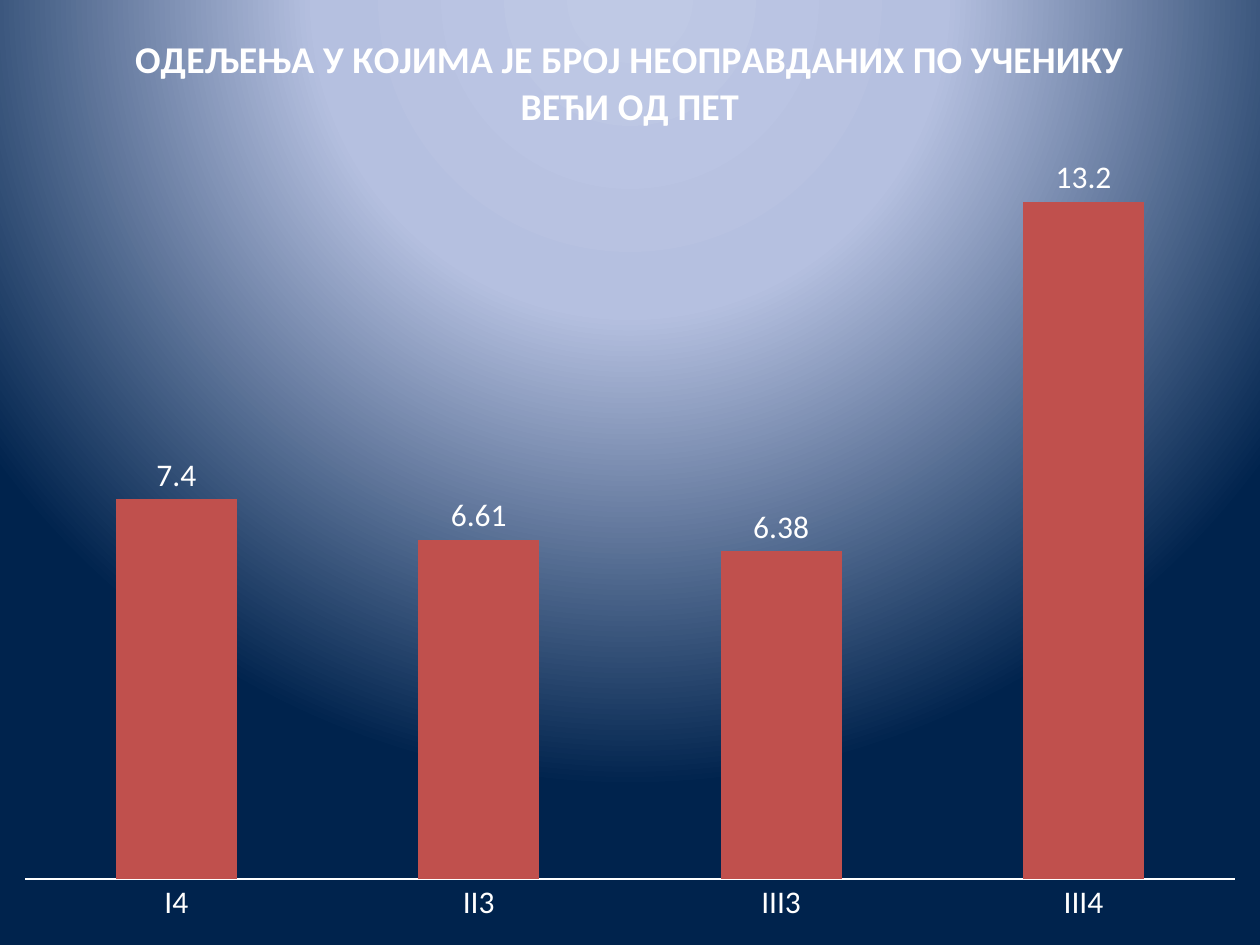
from pptx import Presentation
from pptx.chart.data import CategoryChartData
from pptx.dml.color import RGBColor
from pptx.enum.chart import XL_CHART_TYPE, XL_LABEL_POSITION, XL_TICK_MARK
from pptx.oxml import parse_xml
from pptx.oxml.ns import nsdecls, qn
from pptx.util import Pt

COLUMNS = XL_CHART_TYPE.COLUMN_CLUSTERED
OUTSIDE_END = XL_LABEL_POSITION.OUTSIDE_END
NO_TICKS = XL_TICK_MARK.NONE

SLIDE_W, SLIDE_H = 720, 540
FONT = "Calibri"
WHITE, RED = "FFFFFF", "C0504D"
GLOW = [(0, "BFC9E5"), (40, "B5C0E0"), (100, "00234D")]
TITLE = "ОДЕЉЕЊА У КОЈИМА ЈЕ БРОЈ НЕОПРАВДАНИХ ПО УЧЕНИКУ ВЕЋИ ОД ПЕТ"
ABSENCES = {"I4": 7.4, "II3": 6.61, "III3": 6.38, "III4": 13.2}


def color(hex_value):
    return RGBColor.from_string(hex_value)


def style_font(font, size, bold=False):
    font.name = FONT
    font.size = Pt(size)
    font.bold = bold
    font.color.rgb = color(WHITE)


def paint_background(slide):
    """Radial glow centred above the top edge."""
    slide.background.fill.gradient()
    gradient = slide.element.find(".//" + qn("a:gradFill"))
    stops = "".join(
        f'<a:gs pos="{percent * 1000}"><a:srgbClr val="{shade}"/></a:gs>'
        for percent, shade in GLOW
    )
    glow = parse_xml(
        f'<a:gradFill {nsdecls("a")} rotWithShape="1"><a:gsLst>{stops}</a:gsLst>'
        '<a:path path="circle"><a:fillToRect l="50000" t="-80000" r="50000" b="180000"/>'
        "</a:path></a:gradFill>"
    )
    gradient.getparent().replace(gradient, glow)


def set_plot_area(chart, x, y, w, h):
    """Fix the inner plot area, as fractions of the chart."""
    plot_area = chart.element.find(".//" + qn("c:plotArea"))
    for old_layout in plot_area.findall(qn("c:layout")):
        plot_area.remove(old_layout)
    sides = "".join(
        f'<c:{side} val="{value}"/>' for side, value in zip("xywh", (x, y, w, h))
    )
    plot_area.insert(0, parse_xml(
        f'<c:layout {nsdecls("c")}><c:manualLayout><c:layoutTarget val="inner"/>'
        f'<c:xMode val="edge"/><c:yMode val="edge"/>{sides}'
        "</c:manualLayout></c:layout>"
    ))


def add_absence_chart(slide, left, top, width, height):
    data = CategoryChartData()
    data.categories = list(ABSENCES)
    data.add_series("Series 1", list(ABSENCES.values()))
    chart = slide.shapes.add_chart(
        COLUMNS, Pt(left), Pt(top), Pt(width), Pt(height), data
    ).chart
    style_font(chart.font, 18)
    chart.has_legend = False
    set_plot_area(chart, 0.02, 0.17, 0.96, 0.76)

    # Title
    chart.has_title = True
    heading = chart.chart_title.text_frame
    heading.text = TITLE
    style_font(heading.paragraphs[0].runs[0].font, 21.6, bold=True)
    chart.chart_title.include_in_layout = False

    # Axes
    classes = chart.category_axis
    classes.major_tick_mark = classes.minor_tick_mark = NO_TICKS
    classes.format.line.color.rgb = color(WHITE)
    classes.format.line.width = Pt(1)
    average = chart.value_axis
    average.minimum_scale, average.maximum_scale = 0, 14
    average.has_major_gridlines = False
    average.visible = False

    # Columns and their values
    plot = chart.plots[0]
    plot.gap_width, plot.overlap = 150, -25
    plot.vary_by_categories = False
    columns = plot.series[0]
    columns.format.fill.solid()
    columns.format.fill.fore_color.rgb = color(RED)
    labels = columns.data_labels
    labels.show_value = True
    labels.position = OUTSIDE_END
    style_font(labels.font, 18)


def main():
    deck = Presentation()
    deck.slide_width, deck.slide_height = Pt(SLIDE_W), Pt(SLIDE_H)
    slide = deck.slides.add_slide(deck.slide_layouts[6])
    paint_background(slide)
    add_absence_chart(slide, 0, 0, SLIDE_W, SLIDE_H)
    deck.save("out.pptx")


if __name__ == "__main__":
    main()
